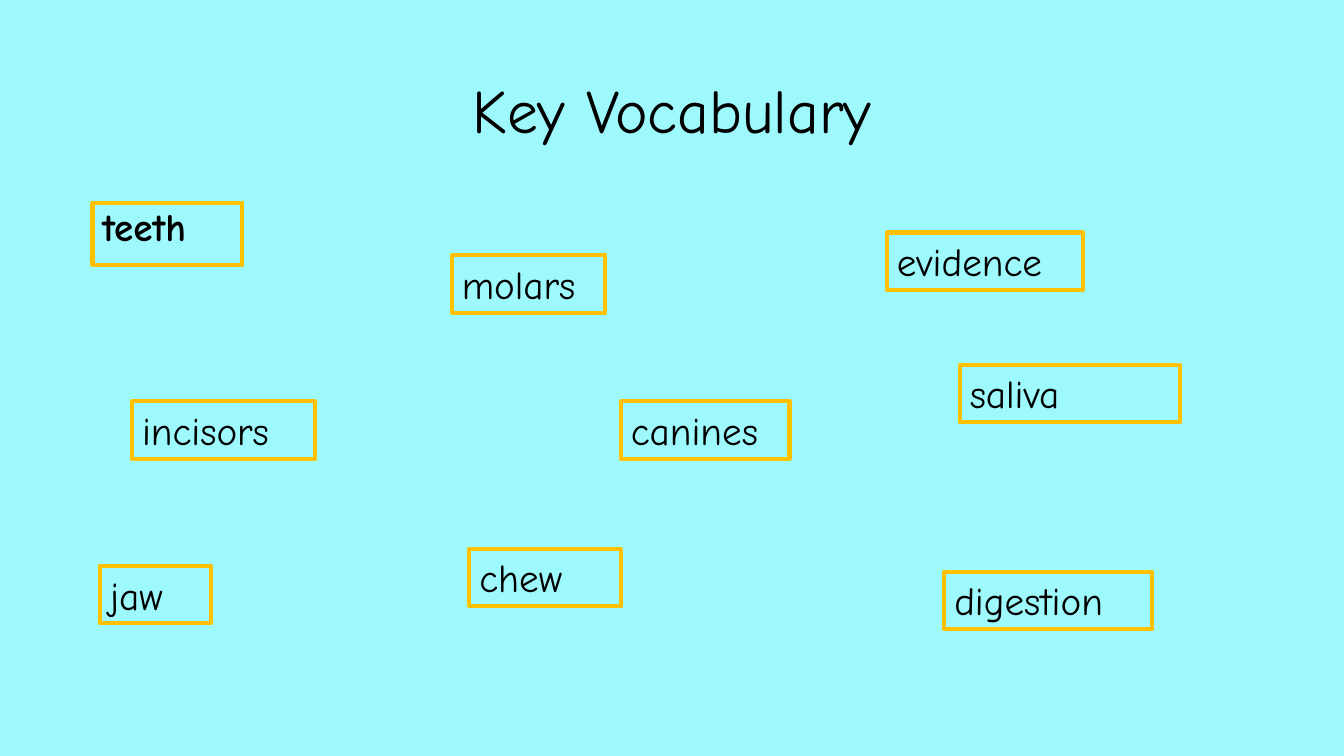
from pptx import Presentation
from pptx.dml.color import RGBColor
from pptx.enum.text import MSO_ANCHOR, MSO_AUTO_SIZE, PP_ALIGN
from pptx.util import Cm, Pt

COLOURS = {"background": "9EF9FD", "border": "FFC000", "text": "000000"}
FONT = "Comic Neue"
WORD_HEIGHT = 1.45
WORDS = [
    ("incisors", 3.33, 10.11, 4.61),
    ("jaw", 2.52, 14.26, 2.8),
    ("canines", 15.65, 10.11, 4.25),
    ("molars", 11.39, 6.43, 3.86),
    ("chew", 11.83, 13.83, 3.82),
    ("digestion", 23.8, 14.41, 5.23),
    ("evidence", 22.35, 5.86, 4.94),
    ("saliva", 24.19, 9.19, 5.54),
]


def colour(name):
    """Return the named colour."""
    return RGBColor.from_string(COLOURS[name])


def write_text(frame, text, size=28, bold=False, align=PP_ALIGN.LEFT, spacing=1.0):
    """Write one formatted paragraph into a text frame."""
    para = frame.paragraphs[0]
    para.alignment = align
    para.line_spacing = spacing
    span = para.add_run()
    span.text = text
    span.font.name = FONT
    span.font.size = Pt(size)
    span.font.bold = bold
    span.font.color.rgb = colour("text")


def add_title(page, text, left, top, width, height):
    """Place the centred title in the given box."""
    title = page.shapes.title
    title.left, title.top = Cm(left), Cm(top)
    title.width, title.height = Cm(width), Cm(height)
    title.text_frame.vertical_anchor = MSO_ANCHOR.MIDDLE
    write_text(title.text_frame, text, size=44, align=PP_ALIGN.CENTER, spacing=0.9)


def add_word(page, word, left, top, width, height=WORD_HEIGHT,
             fit=MSO_AUTO_SIZE.SHAPE_TO_FIT_TEXT, **text_format):
    """Place a vocabulary word in a bordered box."""
    box = page.shapes.add_textbox(Cm(left), Cm(top), Cm(width), Cm(height))
    box.line.color.rgb = colour("border")
    box.line.width = Pt(3)
    box.text_frame.word_wrap = True
    box.text_frame.auto_size = fit
    write_text(box.text_frame, word, **text_format)


def add_vocabulary_page(deck):
    """Add the vocabulary page to the deck."""
    page = deck.slides.add_slide(deck.slide_layouts[5])
    page.background.fill.solid()
    page.background.fill.fore_color.rgb = colour("background")
    add_title(page, "Key Vocabulary", 2.33, 1.02, 29.21, 3.68)
    add_word(page, "teeth", 2.33, 5.11, 3.78, height=1.57,
             fit=MSO_AUTO_SIZE.NONE, bold=True, spacing=0.9)
    for word, left, top, width in WORDS:
        add_word(page, word, left, top, width)


def main():
    """Build and save the deck."""
    deck = Presentation()
    deck.slide_width, deck.slide_height = Cm(33.87), Cm(19.05)
    add_vocabulary_page(deck)
    deck.save("out.pptx")


if __name__ == "__main__":
    main()
